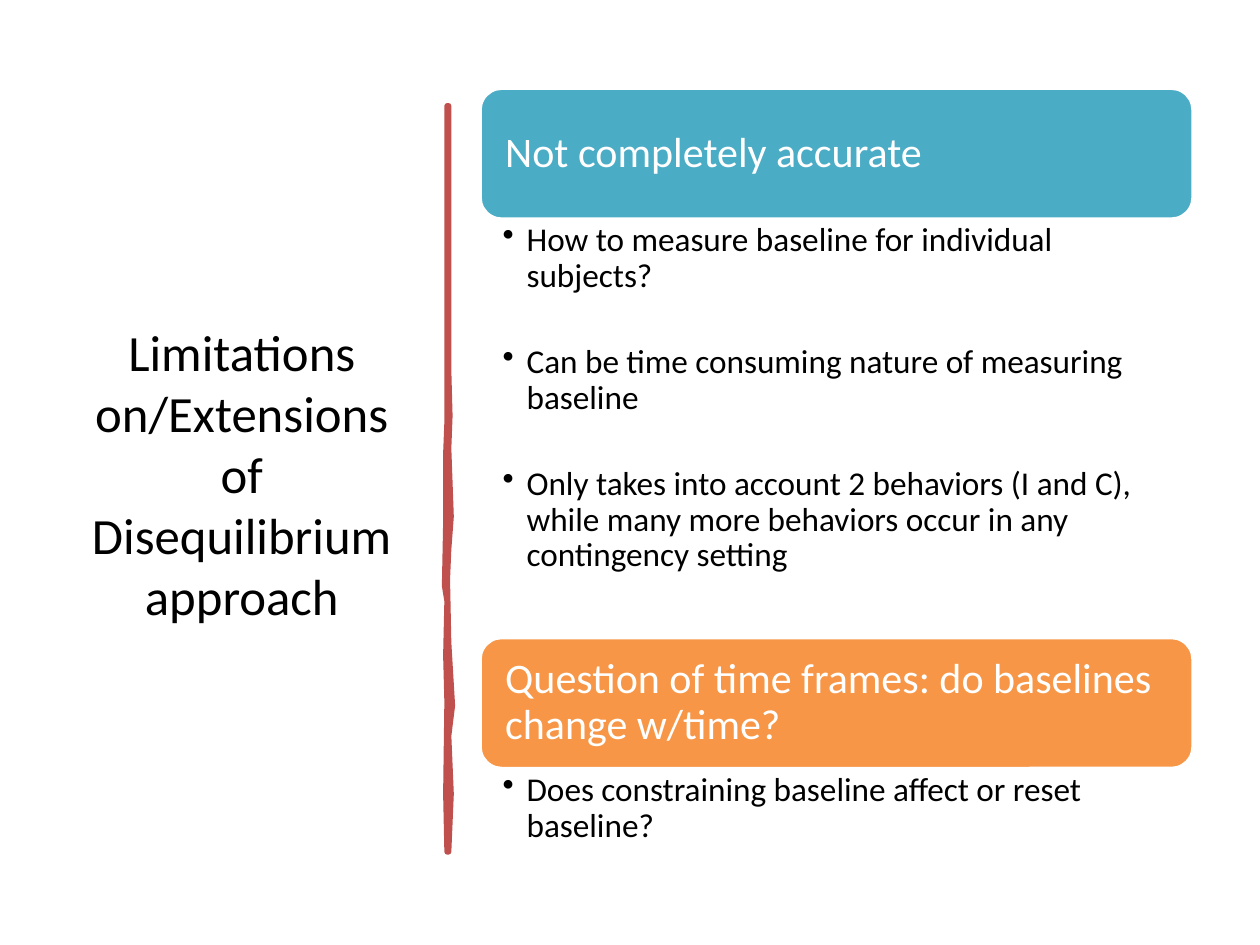
"""Build the slide on limitations of the disequilibrium approach."""
import pptx
import pptx.util
import pptx.dml.color
import pptx.enum.shapes
import pptx.enum.text
import pptx.oxml.ns
import lxml.etree
from dataclasses import dataclass


@dataclass(frozen=True)
class Theme:
    font: str = "Calibri"
    ink: str = "000000"
    paper: str = "FFFFFF"
    rule: str = "C0504D"
    title: int = 29
    header: int = 24
    body: int = 19


T = Theme()
TITLE = "Limitations on/Extensions of Disequilibrium approach"
SECTIONS = [
    ("Not completely accurate", "4BACC6", 3.32, [
        "How to measure baseline for individual subjects?",
        "Can be time consuming nature of measuring baseline",
        "Only takes into account 2 behaviors (I and C), while many more "
        "behaviors occur in any contingency setting",
    ]),
    ("Question of time frames: do baselines change w/time?", "F79646", 0.65, [
        "Does constraining baseline affect or reset baseline?",
    ]),
]
RULE_RIGHT = [(356, 84), (356, 294), (357, 330), (356, 356), (358, 410), (356, 436),
              (355, 460), (356, 510), (359, 560), (356, 584), (358, 630), (356, 676)]
RULE_LEFT = [(355, 676), (354, 630), (355, 557), (354, 520), (355, 477), (353, 465),
             (354, 415), (354, 360), (355, 335), (355, 84)]
TOP, LEFT, WIDTH, HEADER_H = 0.7, 3.81, 5.66, 1.04

In = pptx.util.Inches
Pt = pptx.util.Pt
ANCHOR = pptx.enum.text.MSO_ANCHOR
ALIGN = pptx.enum.text.PP_ALIGN


def rgb(value):
    return pptx.dml.color.RGBColor.from_string(value)


def style(sp, fill, line, width):
    sp.shadow.inherit = False
    sp.fill.solid()
    sp.fill.fore_color.rgb = rgb(fill)
    sp.line.color.rgb = rgb(line)
    sp.line.width = Pt(width)


def write(sp, *texts, size, color=T.ink, align=ALIGN.LEFT, anchor=ANCHOR.MIDDLE,
          insets=(0.1, 0.05, 0.1, 0.05), spacing=0.9, after=0, bullet=False):
    tf = sp.text_frame
    tf.word_wrap = True
    tf.vertical_anchor = anchor
    tf.margin_left, tf.margin_top, tf.margin_right, tf.margin_bottom = map(In, insets)
    for i, text in enumerate(texts):
        p = tf.paragraphs[0] if i == 0 else tf.add_paragraph()
        p.alignment, p.line_spacing, p.space_after = align, spacing, Pt(after)
        r = p.add_run()
        r.text = text
        r.font.name, r.font.size = T.font, Pt(size)
        r.font.color.rgb = rgb(color)
        if bullet:
            pPr = p._p.get_or_add_pPr()
            pPr.set("marL", str(In(0.19)))
            pPr.set("indent", str(-In(0.19)))
            lxml.etree.SubElement(pPr, pptx.oxml.ns.qn("a:buChar")).set("char", "•")


def add_section(s, top, header, color, body_h, bullets):
    sp = s.shapes.add_shape(pptx.enum.shapes.MSO_SHAPE.ROUNDED_RECTANGLE,
                            In(LEFT), In(top), In(WIDTH), In(HEADER_H))
    style(sp, color, T.paper, 2)
    write(sp, header, size=T.header, color=T.paper, insets=(0.15, 0.1, 0.15, 0.1))
    sp = s.shapes.add_textbox(In(LEFT), In(top + HEADER_H), In(WIDTH), In(body_h))
    write(sp, *bullets, size=T.body, anchor=ANCHOR.TOP, after=28.5, bullet=True,
          insets=(0.18, 0.03, 0.19, 0.03))
    return top + HEADER_H + body_h


def main():
    prs = pptx.Presentation()
    prs.slide_width, prs.slide_height = In(10), In(7.5)
    s = prs.slides.add_slide(prs.slide_layouts[6])
    sp = s.shapes.add_textbox(In(0.52), In(TOP), In(2.8), In(6.11))
    write(sp, TITLE, size=T.title, align=ALIGN.CENTER, spacing=1.0)
    outline = RULE_RIGHT + RULE_LEFT
    builder = s.shapes.build_freeform(*outline[0], scale=In(0.01))
    builder.add_line_segments(outline[1:], close=True)
    style(builder.convert_to_shape(), T.rule, T.rule, 3.25)
    top = TOP
    for section in SECTIONS:
        top = add_section(s, top, *section)
    prs.save("out.pptx")


if __name__ == "__main__":
    main()
